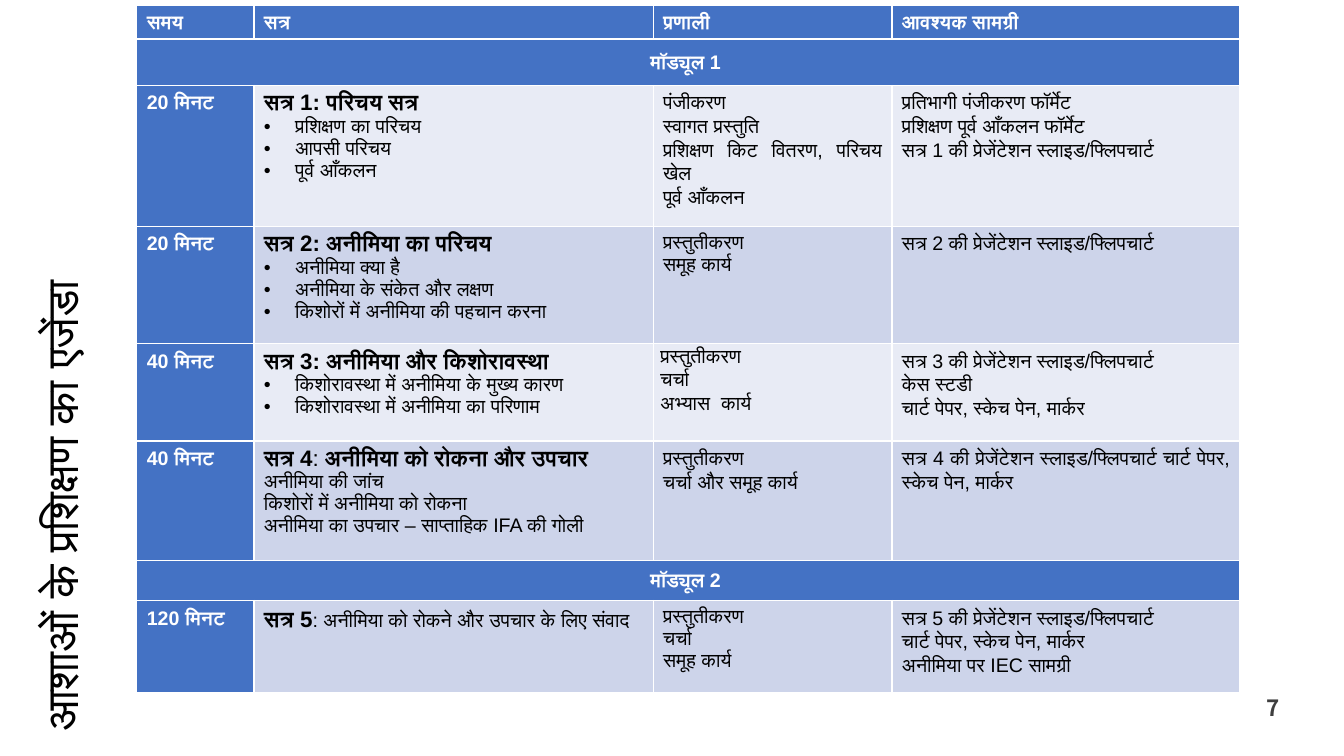
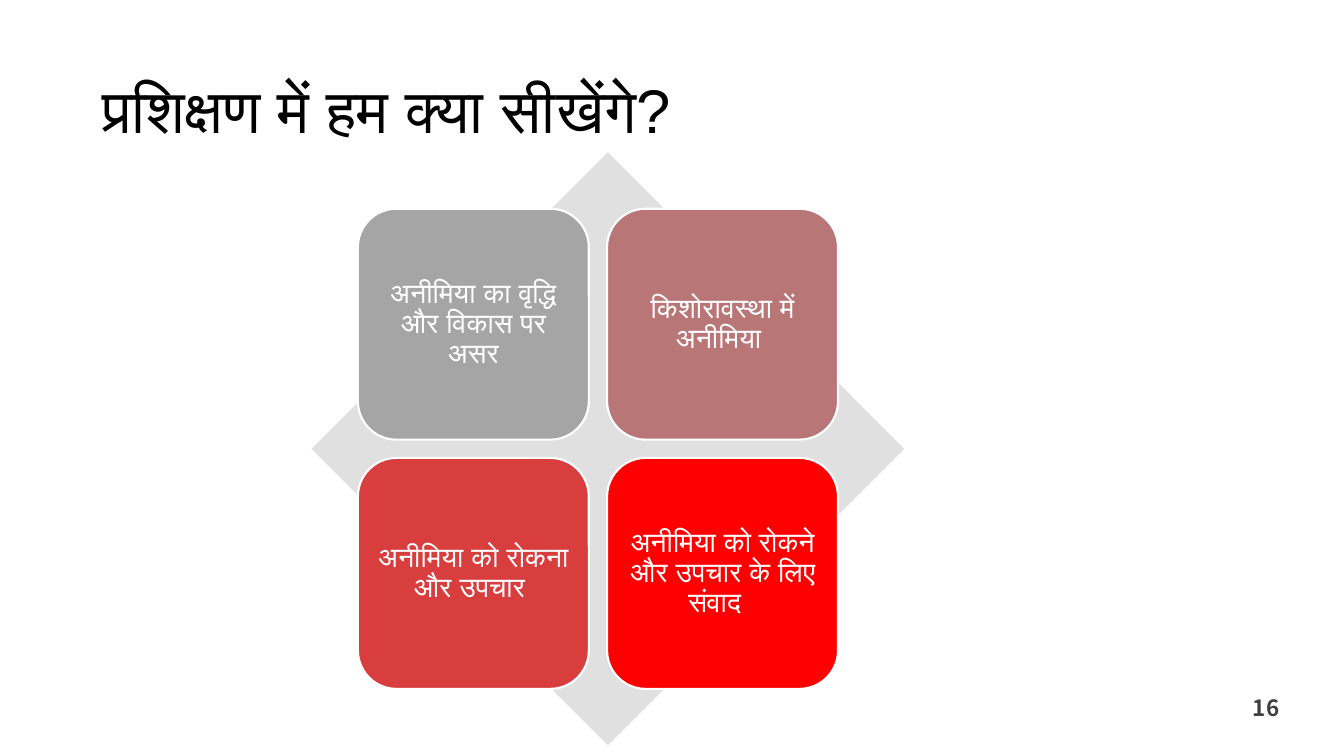
import pptx
import pptx.dml.color
import pptx.enum.shapes
import pptx.enum.text
import pptx.oxml.ns
import pptx.util
import lxml.etree

Cm = pptx.util.Cm
Align = pptx.enum.text.PP_ALIGN
Anchor = pptx.enum.text.MSO_ANCHOR
Shape = pptx.enum.shapes.MSO_SHAPE

WHITE, BLACK, GREY = "FFFFFF", "000000", "3F3F3F"
BLUE, PALE, PALER = "4472C4", "CDD4EA", "E8EBF5"
DECK_FONT, NUMBER_FONT = "Arial", "Noto Sans CJK JP"
CELL_INSETS = (0.25, 0.13, 0.25, 0.13)

AGENDA_HEADER = ["समय ", "सत्र ", "प्रणाली  ", "आवश्यक सामग्री "]
AGENDA_COLUMNS = [2.95, 10.06, 6.02, 8.76]
AGENDA_ROWS = [0.8, 1.17, 3.55, 2.96, 2.45, 3, 1.02, 2.31]
MODULES = {1: "मॉड्यूल 1 ", 6: "मॉड्यूल 2 "}
SESSIONS = {
    2: {
        "time": "20 मिनट  ",
        "heading": [("सत्र 1: परिचय सत्र", 16, True)],
        "topics": ["प्रशिक्षण का परिचय", "आपसी परिचय", "पूर्व आँकलन"],
        "methods": ["पंजीकरण", "स्वागत प्रस्तुति ",
                    "प्रशिक्षण किट वितरण, परिचय खेल", "पूर्व आँकलन"],
        "materials": ["प्रतिभागी पंजीकरण फॉर्मेट", "प्रशिक्षण पूर्व आँकलन फॉर्मेट",
                      "सत्र 1 की प्रेजेंटेशन स्लाइड/फ्लिपचार्ट"],
        "fill": PALER,
    },
    3: {
        "time": "20 मिनट ",
        "heading": [("सत्र 2: अनीमिया का परिचय", 16, True)],
        "topics": ["अनीमिया क्या है", "अनीमिया के संकेत और लक्षण",
                   "किशोरों में अनीमिया की पहचान करना"],
        "methods": ["प्रस्तुतीकरण", "समूह कार्य"],
        "method_style": "plain",
        "materials": ["सत्र 2 की प्रेजेंटेशन स्लाइड/फ्लिपचार्ट"],
        "fill": PALE,
    },
    4: {
        "time": "40 मिनट ",
        "heading": [("सत्र 3: अनीमिया और किशोरावस्था", 16, True)],
        "topics": ["किशोरावस्था में अनीमिया के मुख्य कारण",
                   "किशोरावस्था में अनीमिया का परिणाम"],
        "methods": ["प्रस्तुतीकरण", "चर्चा ", "अभ्यास  कार्य "],
        "method_insets": (0.18, 0, 0.18, 0),
        "materials": ["सत्र 3 की प्रेजेंटेशन स्लाइड/फ्लिपचार्ट", "केस स्टडी",
                      "चार्ट पेपर, स्केच पेन, मार्कर "],
        "fill": PALER,
    },
    5: {
        "time": "40 मिनट ",
        "heading": [("सत्र 4", 16, True), (":", 16, False),
                    (" अनीमिया को रोकना और उपचार", 16, True)],
        "topics": ["अनीमिया की जांच", "किशोरों में अनीमिया को रोकना",
                   "अनीमिया का उपचार – साप्ताहिक IFA की गोली"],
        "topic_style": "plain",
        "methods": ["प्रस्तुतीकरण", "चर्चा और समूह कार्य "],
        "materials": ["सत्र 4 की प्रेजेंटेशन स्लाइड/फ्लिपचार्ट चार्ट पेपर, स्केच पेन, मार्कर"],
        "fill": PALE,
    },
    7: {
        "time": "120 मिनट  ",
        "heading": [("सत्र 5", 16, True),
                    (": अनीमिया को रोकने और उपचार के लिए संवाद ", 14, False)],
        "heading_style": "body",
        "topics": [],
        "methods": ["प्रस्तुतीकरण", "चर्चा", "समूह कार्य"],
        "method_style": "plain",
        "materials": ["सत्र 5 की प्रेजेंटेशन स्लाइड/फ्लिपचार्ट ",
                      "चार्ट पेपर, स्केच पेन, मार्कर ", "अनीमिया पर IEC सामग्री  "],
        "fill": PALE,
    },
}
LESSONS = [
    ("अनीमिया का वृद्धि और विकास पर असर", "A5A5A5"),
    ("किशोरावस्था में अनीमिया ", "B97676"),
    ("अनीमिया को रोकना और उपचार ", "D83E3E"),
    ("अनीमिया को रोकने और उपचार के लिए संवाद  ", "FE0000"),
]


def color(value):
    return pptx.dml.color.RGBColor.from_string(value)


def add_child(parent, tag, **attributes):
    return lxml.etree.SubElement(parent, pptx.oxml.ns.qn(tag), attributes)


def set_insets(target, insets):
    sides = ("margin_left", "margin_top", "margin_right", "margin_bottom")
    for side, inset in zip(sides, insets):
        setattr(target, side, Cm(inset))


class Slides:
    PARA_STYLES = {
        "title": (Align.LEFT, 0.9),
        "number": (Align.RIGHT, 1.0),
        "tile": (Align.CENTER, 0.9),
        "band": (Align.CENTER, 1.07),
        "body": (Align.JUSTIFY, 1.07),
        "plain": (Align.LEFT, 1.0),
        "bullet": (Align.LEFT, 1.0),
    }

    def __init__(self):
        self.deck = pptx.Presentation()
        self.deck.slide_width, self.deck.slide_height = Cm(33.87), Cm(19.05)
        self.page = None

    def start(self, title, place, size, number, rotation=0):
        self.page = self.deck.slides.add_slide(self.deck.slide_layouts[5])
        box = self.page.shapes.title
        box.left, box.top, box.width, box.height = map(Cm, place)
        box.rotation = rotation
        self.frame(box, CELL_INSETS, Anchor.MIDDLE)
        self.text(box.text_frame, [("title", [(title, size, False)])], BLACK)
        self.number(number)

    def number(self, number):
        box = self.page.shapes.add_textbox(Cm(29.21), Cm(17.15), Cm(3.33), Cm(1.27))
        self.frame(box, (0.3, 0.3, 0.3, 0.25), Anchor.BOTTOM)
        self.text(box.text_frame, [("number", [(number, 16, True)])], GREY, NUMBER_FONT)

    def frame(self, box, insets, anchor):
        box.text_frame.word_wrap = True
        box.text_frame.auto_size = pptx.enum.text.MSO_AUTO_SIZE.NONE
        box.text_frame.vertical_anchor = anchor
        set_insets(box.text_frame, insets)

    def text(self, frame, paras, ink, font=DECK_FONT):
        for index, (style, runs) in enumerate(paras):
            para = frame.add_paragraph() if index else frame.paragraphs[0]
            para.alignment, para.line_spacing = self.PARA_STYLES[style]
            if style == "bullet":
                self.bullet(para, ink)
            for words, size, bold in runs:
                span = para.add_run()
                span.text = words
                span.font.size, span.font.bold = pptx.util.Pt(size), bold
                span.font.color.rgb = color(ink)
                span.font.name = font
                for script in ("a:ea", "a:cs"):
                    add_child(span._r.get_or_add_rPr(), script, typeface=font)

    def bullet(self, para, ink):
        properties = para._p.get_or_add_pPr()
        indent = Cm(0.79)
        properties.set("marL", str(indent))
        properties.set("indent", str(-indent))
        add_child(add_child(properties, "a:buClr"), "a:srgbClr", val=ink)
        add_child(properties, "a:buFont", typeface=DECK_FONT)
        add_child(properties, "a:buChar", char="•")

    def shape(self, kind, left, top, size, fill, line=None):
        shape = self.page.shapes.add_shape(kind, Cm(left), Cm(top), Cm(size), Cm(size))
        shape.shadow.inherit = False
        shape.fill.solid()
        shape.fill.fore_color.rgb = color(fill)
        if line:
            shape.line.color.rgb = color(line)
            shape.line.width = pptx.util.Pt(1.5)
        else:
            shape.line.fill.background()
        return shape

    def tile(self, left, top, size, words, fill):
        tile = self.shape(Shape.ROUNDED_RECTANGLE, left, top, size, fill, WHITE)
        self.frame(tile, (0.2, 0.2, 0.2, 0.2), Anchor.MIDDLE)
        self.text(tile.text_frame, [("tile", [(words, 20, False)])], WHITE)

    def table(self, left, top, widths, heights):
        table = self.page.shapes.add_table(
            len(heights), len(widths), Cm(left), Cm(top),
            Cm(sum(widths)), Cm(sum(heights))).table
        table.horz_banding = False
        for column, width in zip(table.columns, widths):
            column.width = Cm(width)
        for row, height in zip(table.rows, heights):
            row.height = Cm(height)
        return table

    def cell(self, cell, paras, fill, ink=BLACK, insets=CELL_INSETS):
        cell.fill.solid()
        cell.fill.fore_color.rgb = color(fill)
        set_insets(cell, insets)
        self.text(cell.text_frame, paras, ink)

    def label(self, cell, words, style="body"):
        self.cell(cell, [(style, [(words, 14, True)])], BLUE, WHITE)

    def session(self, table, row, session):
        def lines(key, style):
            return [(style, [(words, 14, False)]) for words in session[key]]

        fill = session["fill"]
        heading = (session.get("heading_style", "plain"), session["heading"])
        topics = lines("topics", session.get("topic_style", "bullet"))
        methods = lines("methods", session.get("method_style", "body"))
        self.label(table.cell(row, 0), session["time"])
        self.cell(table.cell(row, 1), [heading] + topics, fill)
        self.cell(table.cell(row, 2), methods, fill,
                  insets=session.get("method_insets", CELL_INSETS))
        self.cell(table.cell(row, 3), lines("materials", "body"), fill)


def agenda(slides):
    slides.start("आशाओं के प्रशिक्षण का एजेंडा", (-7.16, 8.08, 17.55, 3.68), 32, "7", 270)
    table = slides.table(3.45, 0.13, AGENDA_COLUMNS, AGENDA_ROWS)
    for column, words in enumerate(AGENDA_HEADER):
        slides.label(table.cell(0, column), words)
    for row, words in MODULES.items():
        band = table.cell(row, 0)
        band.merge(table.cell(row, len(AGENDA_COLUMNS) - 1))
        band.vertical_anchor = Anchor.MIDDLE
        slides.label(band, words, "band")
    for row, session in SESSIONS.items():
        slides.session(table, row, session)


def lessons(slides):
    slides.start("प्रशिक्षण में हम क्या सीखेंगे?", (2.33, 1.01, 29.21, 3.68), 44, "16")
    slides.shape(Shape.DIAMOND, 7.85, 3.84, 14.94, "E0E0E0")
    size, step = 5.82, 6.28
    for index, (words, fill) in enumerate(LESSONS):
        row, column = divmod(index, 2)
        slides.tile(9.02 + column * step, 5.26 + row * step, size, words, fill)


def main():
    slides = Slides()
    agenda(slides)
    lessons(slides)
    slides.deck.save("out.pptx")


if __name__ == "__main__":
    main()
